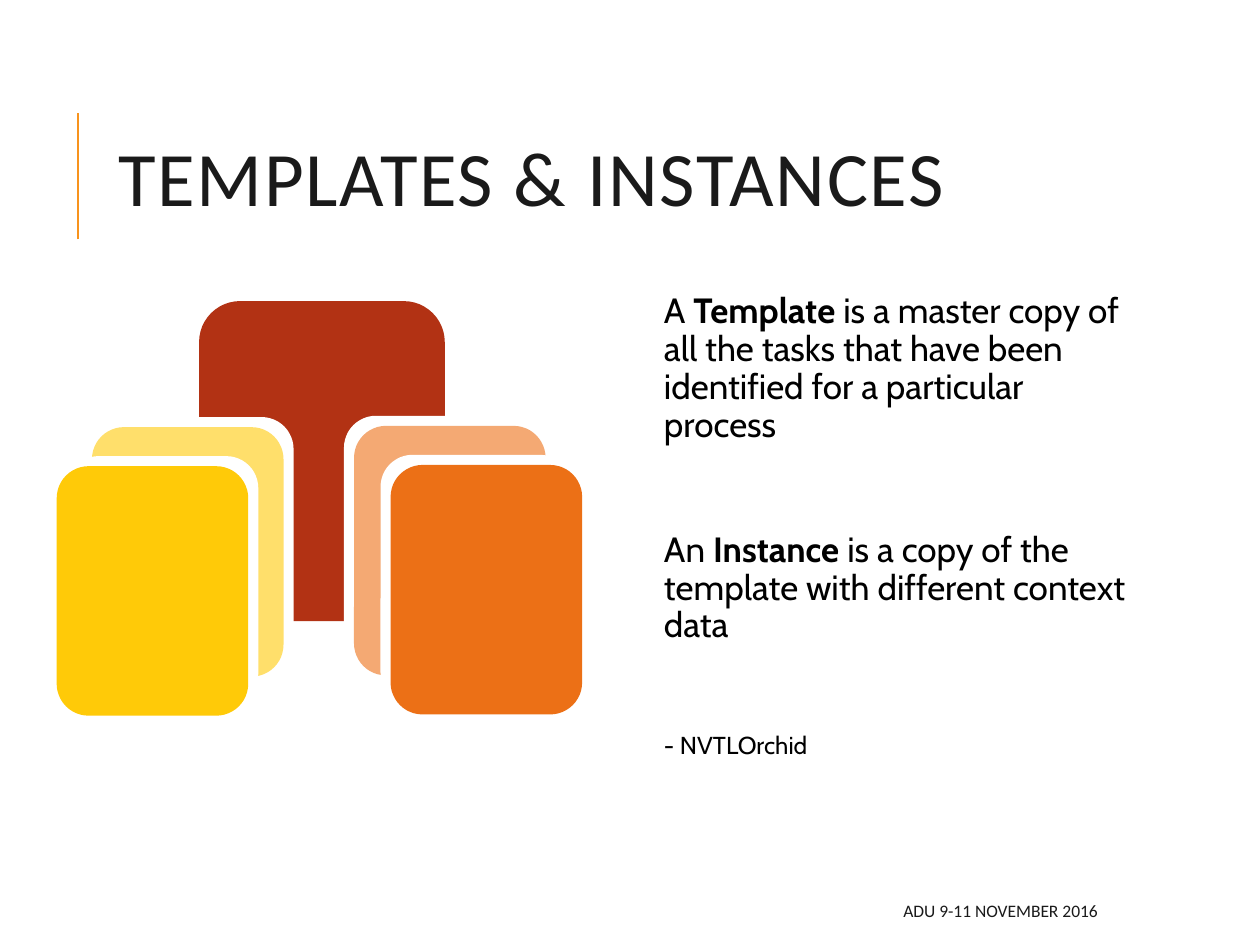
from typing import NamedTuple

from lxml import etree
from pptx import Presentation
from pptx.dml.color import RGBColor
from pptx.enum.shapes import MSO_CONNECTOR, MSO_SHAPE
from pptx.enum.text import MSO_ANCHOR, PP_ALIGN
from pptx.oxml.ns import qn
from pptx.util import Inches, Pt

ROUND = MSO_SHAPE.ROUNDED_RECTANGLE
LINE = MSO_CONNECTOR.STRAIGHT
TOP, MIDDLE = MSO_ANCHOR.TOP, MSO_ANCHOR.MIDDLE
LEFT, RIGHT = PP_ALIGN.LEFT, PP_ALIGN.RIGHT

HUES = {
    "white": "FFFFFF", "black": "000000", "ink": "1A1A1A", "bar": "F8931D",
    "rust": "B23214", "peach": "F4A973", "orange": "EC7016",
    "cream": "FFDF6B", "yellow": "FFCA08",
}
CARD = (1.52, 1.98)
HALO = 0.08


class Box(NamedTuple):
    left: float
    top: float
    width: float
    height: float


class Card(NamedTuple):
    left: float
    top: float
    hue: str
    inward: int


class Para(NamedTuple):
    texts: list[tuple[str, bool]]
    size: int
    before: int = 0


CARDS = [
    Card(2.81, 3.38, "peach", -1),
    Card(3.1, 3.69, "orange", -1),
    Card(0.73, 3.39, "cream", 1),
    Card(0.45, 3.7, "yellow", 1),
]
BODY = [
    Para([("A ", False), ("Template ", True),
          ("is a master copy of all the tasks that have been identified "
           "for a particular process", False)], 20),
    Para([("An ", False), ("Instance", True),
          (" is a copy of the template with different context data", False)],
         20, 48),
    Para([("- NVTLOrchid", False)], 14, 48),
]


def color(name: str) -> RGBColor:
    """Turn a hue name into a colour."""
    return RGBColor.from_string(HUES[name])


def add_text(slide, box: Box, paras: list[Para], *, font: str, hue: str,
             align=LEFT, anchor=TOP, pitch: float = 1.0, after: int = 0,
             track: int = 0, inset: tuple = (0.1, 0.05, 0.1, 0.05)) -> None:
    """Add a wrapped text box with formatted paragraphs."""
    frame = slide.shapes.add_textbox(*map(Inches, box)).text_frame
    frame.word_wrap = True
    frame.vertical_anchor = anchor
    (frame.margin_left, frame.margin_top,
     frame.margin_right, frame.margin_bottom) = map(Inches, inset)
    for i, para in enumerate(paras):
        line = frame.add_paragraph() if i else frame.paragraphs[0]
        line.alignment = align
        line.line_spacing = pitch
        line.space_before = Pt(para.before)
        line.space_after = Pt(after)
        for words, bold in para.texts:
            run = line.add_run()
            run.text = words
            run.font.name = font
            run.font.size = Pt(para.size)
            run.font.bold = bold
            run.font.color.rgb = color(hue)
            if track:
                run._r.get_or_add_rPr().set("spc", str(track))


def add_tile(slide, box: Box, hue: str) -> None:
    """Add a plain rounded tile."""
    tile = slide.shapes.add_shape(ROUND, *map(Inches, box))
    tile.shadow.inherit = False
    tile.fill.solid()
    tile.fill.fore_color.rgb = color(hue)
    tile.line.fill.background()


def add_card(slide, card: Card) -> None:
    """Add a card over its white halo."""
    halo = Box(card.left + card.inward * HALO, card.top - HALO, *CARD)
    add_tile(slide, halo, "white")
    add_tile(slide, Box(card.left, card.top, *CARD), card.hue)


def add_bar(slide) -> None:
    """Add the upright line beside the title."""
    bar = slide.shapes.add_connector(LINE, *map(Inches, (0.62, 1.9, 0.62, 0.9)))
    bar.line.color.rgb = color("bar")
    bar.line.width = Pt(1.5)
    etree.SubElement(bar._element.spPr, qn("a:effectLst"))


def main() -> None:
    """Build and save the slide."""
    deck = Presentation()
    deck.slide_width, deck.slide_height = Inches(10), Inches(7.5)
    slide = deck.slides.add_slide(deck.slide_layouts[6])
    add_bar(slide)
    add_text(slide, Box(0.84, 0.64, 7.97, 1.64),
             [Para([("TEMPLATES & INSTANCES", False)], 44)],
             font="Calibri", hue="ink", anchor=MIDDLE, pitch=0.8, track=100)
    add_text(slide, Box(5.12, 2.28, 3.9, 4.4), BODY, font="Cabin",
             hue="black", pitch=0.9, after=2, inset=(0.15, 0.05, 0.05, 0.05))
    add_text(slide, Box(3.97, 7.08, 4.84, 0.3),
             [Para([("ADU 9-11 NOVEMBER 2016", False)], 10)],
             font="Calibri", hue="ink", align=RIGHT, anchor=MIDDLE)
    add_tile(slide, Box(1.58, 2.39, 1.95, 2.54), "rust")
    for card in CARDS:
        add_card(slide, card)
    deck.save("out.pptx")


if __name__ == "__main__":
    main()
